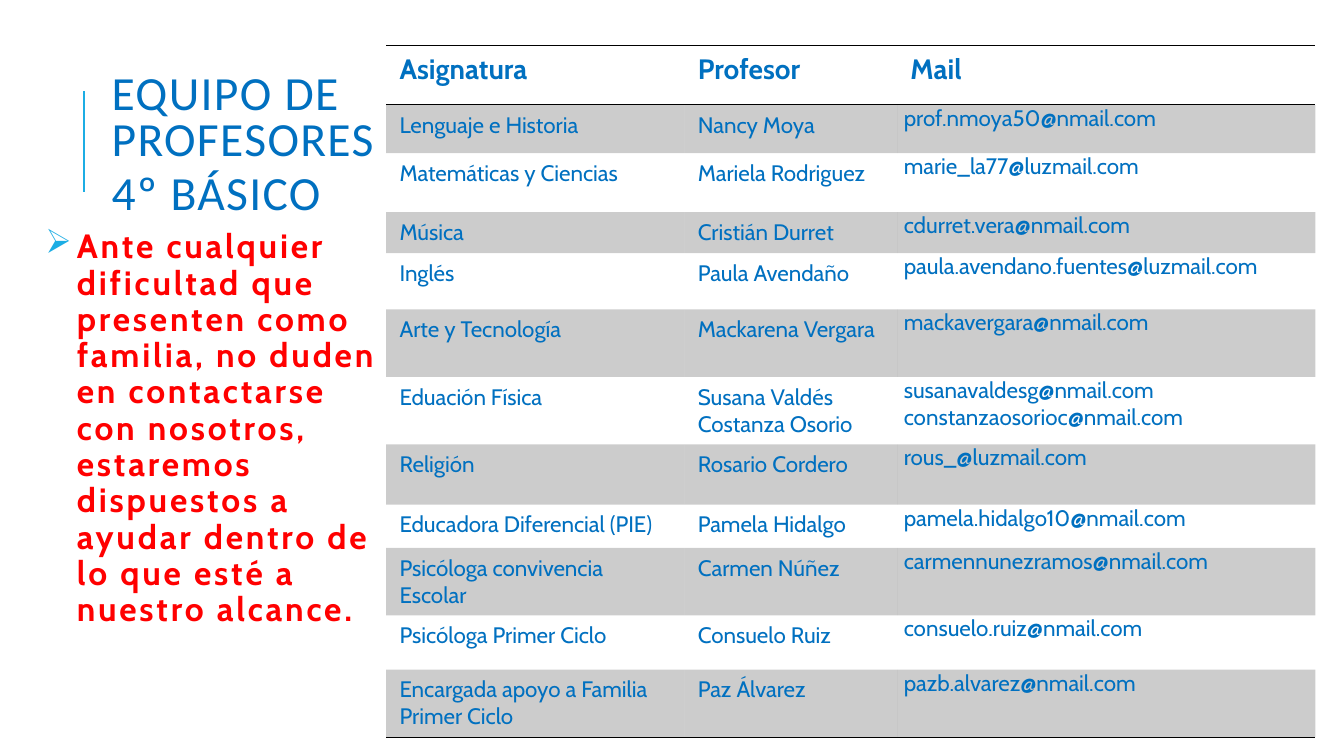
from lxml import etree
from pptx import Presentation
from pptx.dml.color import RGBColor
from pptx.enum.shapes import MSO_CONNECTOR
from pptx.enum.text import MSO_ANCHOR
from pptx.oxml import parse_xml
from pptx.oxml.ns import nsdecls, qn
from pptx.util import Pt

STRAIGHT = MSO_CONNECTOR.STRAIGHT
TOP, MIDDLE = MSO_ANCHOR.TOP, MSO_ANCHOR.MIDDLE
BLUE = RGBColor(0x00, 0x70, 0xC0)
CYAN = RGBColor(0x1C, 0xAD, 0xE4)
RED = RGBColor(0xFF, 0x00, 0x00)
BLACK = RGBColor(0x00, 0x00, 0x00)
NO_STYLE_NO_GRID = "{2D5ABB26-0587-4C30-8999-92F81FD0307C}"

TITLE_FONT = {"name": "Calibri", "size": Pt(34), "bold": False}
NOTICE_FONT = {"name": "Cabin", "size": Pt(24), "bold": True}
HEADER_FONT = {"name": "Cabin", "size": Pt(20), "bold": True}
BODY_FONT = {"name": "Cabin", "size": Pt(16), "bold": False}
WIDE_MARGINS = {"margin_left": Pt(9.6), "margin_right": Pt(9.6),
                "margin_top": Pt(4.8), "margin_bottom": Pt(4.8)}
MAIL_MARGINS = {"margin_left": Pt(4.8), "margin_right": Pt(4.8),
                "margin_top": Pt(0), "margin_bottom": Pt(0)}
TITLE_FRAME = {"word_wrap": True, "vertical_anchor": MIDDLE}
NOTICE_FRAME = {"word_wrap": True, "vertical_anchor": TOP,
                "margin_left": Pt(3.6), "margin_right": Pt(3.6),
                "margin_top": Pt(0), "margin_bottom": Pt(3.6)}

TITLE = ["EQUIPO DE PROFESORES", "4º BÁSICO"]
NOTICE = ("Ante cualquier dificultad que presenten como familia, no duden en "
          "contactarse con nosotros, estaremos dispuestos a ayudar dentro de "
          "lo que esté a nuestro alcance.")
COLUMN_WIDTHS = [213.1, 151.9, 298.8]
# Row height, subject, teacher, mail
TEACHERS = [
    (42.5, "Asignatura", "Profesor", "Mail"),
    (34.5, "Lenguaje e Historia", "Nancy Moya", "prof.nmoya50@nmail.com"),
    (42.2, "Matemáticas y Ciencias", "Mariela Rodriguez", "marie_la77@luzmail.com"),
    (29.2, "Música", "Cristián Durret", "cdurret.vera@nmail.com"),
    (40.3, "Inglés", "Paula Avendaño", "paula.avendano.fuentes@luzmail.com"),
    (48.2, "Arte y Tecnología", "Mackarena Vergara", "mackavergara@nmail.com"),
    (48.2, "Eduación Física", "Susana Valdés\nCostanza Osorio",
     "susanavaldesg@nmail.com\nconstanzaosorioc@nmail.com"),
    (43, "Religión", "Rosario Cordero", "rous_@luzmail.com"),
    (31, "Educadora Diferencial (PIE)", "Pamela Hidalgo", "pamela.hidalgo10@nmail.com"),
    (48.2, "Psicóloga convivencia Escolar", "Carmen Núñez", "carmennunezramos@nmail.com"),
    (38.8, "Psicóloga Primer Ciclo", "Consuelo Ruiz", "consuelo.ruiz@nmail.com"),
    (48.2, "Encargada apoyo a Familia Primer Ciclo", "Paz Álvarez", "pazb.alvarez@nmail.com"),
]


def apply_format(target, values):
    for attribute, value in values.items():
        setattr(target, attribute, value)


def add_text(paragraph, text, font, color, spacing=0):
    run = paragraph.add_run()
    run.text = text
    apply_format(run.font, font)
    run.font.color.rgb = color
    if spacing:
        run.font._element.set("spc", str(spacing * 100))


prs = Presentation()
prs.slide_width, prs.slide_height = Pt(960), Pt(540)
slide = prs.slides.add_slide(prs.slide_layouts[6])

# Accent line beside the title
accent = slide.shapes.add_connector(STRAIGHT, Pt(60), Pt(136.8), Pt(60), Pt(64.8))
apply_format(accent.line, {"width": Pt(1.5)})
accent.line.color.rgb = CYAN
etree.SubElement(accent._element.spPr, qn("a:effectLst"))

# Title
title = slide.shapes.add_textbox(Pt(72.7), Pt(46.1), Pt(254.2), Pt(118.1)).text_frame
apply_format(title, TITLE_FRAME)
for index, line in enumerate(TITLE):
    paragraph = title.add_paragraph() if index else title.paragraphs[0]
    apply_format(paragraph, {"line_spacing": 0.8, "space_after": Pt(6)})
    add_text(paragraph, line, TITLE_FONT, BLUE, spacing=1)

# Notice to families
notice = slide.shapes.add_textbox(Pt(28.8), Pt(164.2), Pt(247), Pt(309.6)).text_frame
apply_format(notice, NOTICE_FRAME)
paragraph = notice.paragraphs[0]
apply_format(paragraph, {"line_spacing": 0.9, "space_after": Pt(8)})
properties = paragraph._p.get_or_add_pPr()
properties.set("marL", str(Pt(22.5)))
properties.set("indent", str(-Pt(22.5)))
bullet_color = etree.SubElement(properties, qn("a:buClr"))
etree.SubElement(bullet_color, qn("a:srgbClr"), val=str(CYAN))
etree.SubElement(properties, qn("a:buChar"), char="➢")
add_text(paragraph, NOTICE, NOTICE_FONT, RED, spacing=2)

# Table of teachers
last_row = len(TEACHERS) - 1
teachers = slide.shapes.add_table(
    len(TEACHERS), len(COLUMN_WIDTHS), Pt(275.8), Pt(32.4),
    Pt(sum(COLUMN_WIDTHS)), Pt(sum(row[0] for row in TEACHERS))).table
apply_format(teachers, {"first_row": False, "horz_banding": False})
teachers._tbl.tblPr.find(qn("a:tableStyleId")).text = NO_STYLE_NO_GRID
for column, width in zip(teachers.columns, COLUMN_WIDTHS):
    column.width = Pt(width)

for row_index, (height, *entries) in enumerate(TEACHERS):
    teachers.rows[row_index].height = Pt(height)
    is_header = row_index == 0
    for column_index, entry in enumerate(entries):
        cell = teachers.cell(row_index, column_index)
        is_mail = column_index == 2 and not is_header
        apply_format(cell, MAIL_MARGINS if is_mail else WIDE_MARGINS)
        for index, line in enumerate(entry.split("\n")):
            frame = cell.text_frame
            paragraph = frame.add_paragraph() if index else frame.paragraphs[0]
            add_text(paragraph, line, HEADER_FONT if is_header else BODY_FONT, BLUE)

        # Every odd row is shaded with 20 % black
        if row_index % 2:
            cell.fill.solid()
            cell.fill.fore_color.rgb = BLACK
            shade = cell._tc.tcPr.find(".//" + qn("a:srgbClr"))
            etree.SubElement(shade, qn("a:alpha"), val="20000")
        else:
            cell.fill.background()

        # Rules around the header and under the last row
        edges = {0: ["lnT", "lnB"], last_row: ["lnB"]}.get(row_index, [])
        for position, edge in enumerate(edges):
            cell._tc.tcPr.insert(position, parse_xml(
                f'<a:{edge} {nsdecls("a")} w="{Pt(1)}"><a:solidFill>'
                f'<a:srgbClr val="{BLACK}"/></a:solidFill></a:{edge}>'))

prs.save("out.pptx")
